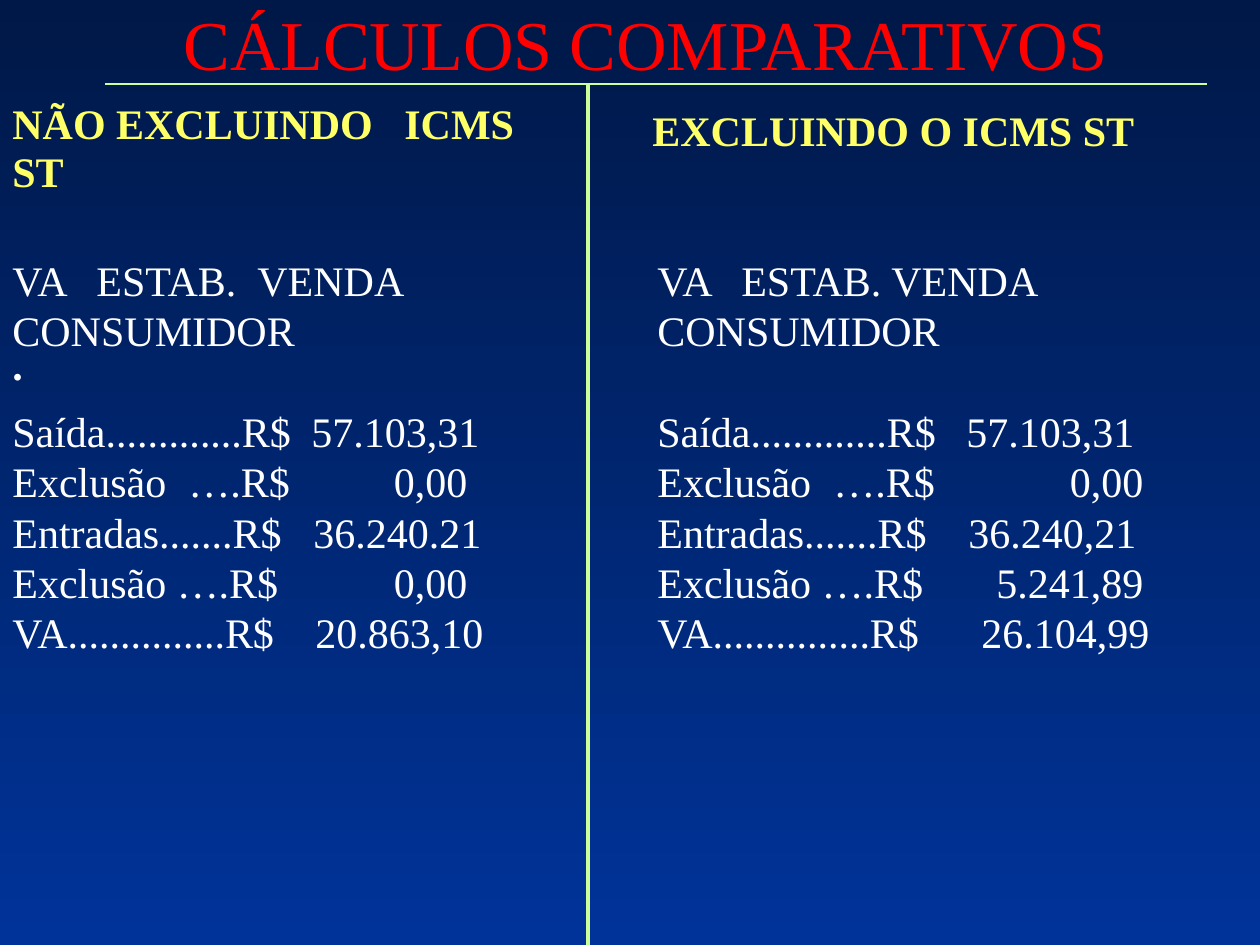
import pptx
import pptx.dml.color
import pptx.enum.shapes
import pptx.enum.text
import pptx.oxml.ns
import pptx.util
from lxml import etree

PX = 914400 / 126
WHITE, RED, YELLOW, GREEN = "FFFFFF", "FF0000", "FFFF66", "CCFF99"


def color(hex_value):
    return pptx.dml.color.RGBColor.from_string(hex_value)


def write_text(frame, text, size=24, fill=WHITE, bold=False, align="LEFT",
               spacing=1.0, before=0, tabs=()):
    """Add one paragraph; tabs are (px from the text edge, "l" or "r")."""
    paragraph = frame.paragraphs[0]
    if paragraph.runs:
        paragraph = frame.add_paragraph()
    paragraph.alignment = getattr(pptx.enum.text.PP_ALIGN, align)
    paragraph.line_spacing = spacing
    paragraph.space_before = pptx.util.Pt(before)
    if tabs:
        properties = paragraph._p.get_or_add_pPr()
        tab_list = etree.SubElement(properties, pptx.oxml.ns.qn("a:tabLst"))
        for position, side in tabs:
            etree.SubElement(tab_list, pptx.oxml.ns.qn("a:tab"),
                             pos=str(round(position * PX)), algn=side)
    run = paragraph.add_run()
    run.text = text
    run.font.name = "Times New Roman"
    run.font.size = pptx.util.Pt(size)
    run.font.bold = bold
    run.font.color.rgb = color(fill)


presentation = pptx.Presentation()
presentation.slide_width = round(1260 * PX)
presentation.slide_height = round(945 * PX)
slide = presentation.slides.add_slide(presentation.slide_layouts[6])

background = slide.background.fill
background.gradient()
background.gradient_angle = 270
for stop, shade in zip(background.gradient_stops, ("001847", "003399")):
    stop.color.rgb = color(shade)

# Heading outlines: left, top, width, height
heading_frames = []
for left, top, width, height in ((32, 0, 1227, 93), (0, 95, 567, 300),
                                 (640, 102, 619, 125)):
    right, bottom = left + width, top + height
    builder = slide.shapes.build_freeform(left, top, scale=PX)
    builder.add_line_segments([(right, top), (right, bottom), (left, bottom)])
    shape = builder.convert_to_shape()
    shape.shadow.inherit = False
    shape.fill.background()
    shape.line.fill.background()
    shape.text_frame.word_wrap = True
    shape.text_frame.vertical_anchor = pptx.enum.text.MSO_ANCHOR.TOP
    heading_frames.append(shape.text_frame)
title, left_heading, right_heading = heading_frames

write_text(title, "CÁLCULOS COMPARATIVOS", size=40, fill=RED,
           align="CENTER", spacing=0.95)
write_text(left_heading, "NÃO EXCLUINDO\tICMS ST", fill=YELLOW,
           bold=True, spacing=0.95, tabs=[(392, "l")])
write_text(left_heading, ".", bold=True, before=81)
write_text(right_heading, "EXCLUINDO O ICMS ST", fill=YELLOW,
           bold=True, spacing=0.95)

# Dividers: x1, y1, x2, y2, width in points
for x1, y1, x2, y2, weight in ((588, 84, 588, 945, 2.25),
                               (105, 84, 1207, 84, 1.5)):
    line = slide.shapes.add_connector(
        pptx.enum.shapes.MSO_CONNECTOR.STRAIGHT,
        *(round(length * PX) for length in (x1, y1, x2, y2)))
    line.line.color.rgb = color(GREEN)
    line.line.width = pptx.util.Pt(weight)
    etree.SubElement(line._element.spPr, pptx.oxml.ns.qn("a:effectLst"))

labels = ["Saída.............R$", "Exclusão\t….R$", "Entradas.......R$",
          "Exclusão ….R$", "VA...............R$"]
# Columns: box, tab before VENDA, then each value with its right edge
columns = [
    ((0, 248, 571, 416), 245,
     [("57.103,31", 467), ("0,00", 455), ("36.240.21", 469),
      ("0,00", 455), ("20.863,10", 471)]),
    ((645, 248, 614, 466), 234,
     [("57.103,31", 477), ("0,00", 486), ("36.240,21", 479),
      ("5.241,89", 486), ("26.104,99", 492)]),
]
for box, sale_tab, values in columns:
    frame = slide.shapes.add_textbox(
        *(round(length * PX) for length in box)).text_frame
    frame.word_wrap = True
    write_text(frame, "VA\tESTAB.\tVENDA CONSUMIDOR",
               tabs=[(84, "l"), (sale_tab, "l")])
    for index, (label, (value, edge)) in enumerate(zip(labels, values)):
        label_tabs = [(176, "l")] if "\t" in label else []
        write_text(frame, f"{label}\t{value}", tabs=label_tabs + [(edge, "r")],
                   before=28.8 if index == 0 else 0)

presentation.save("out.pptx")
